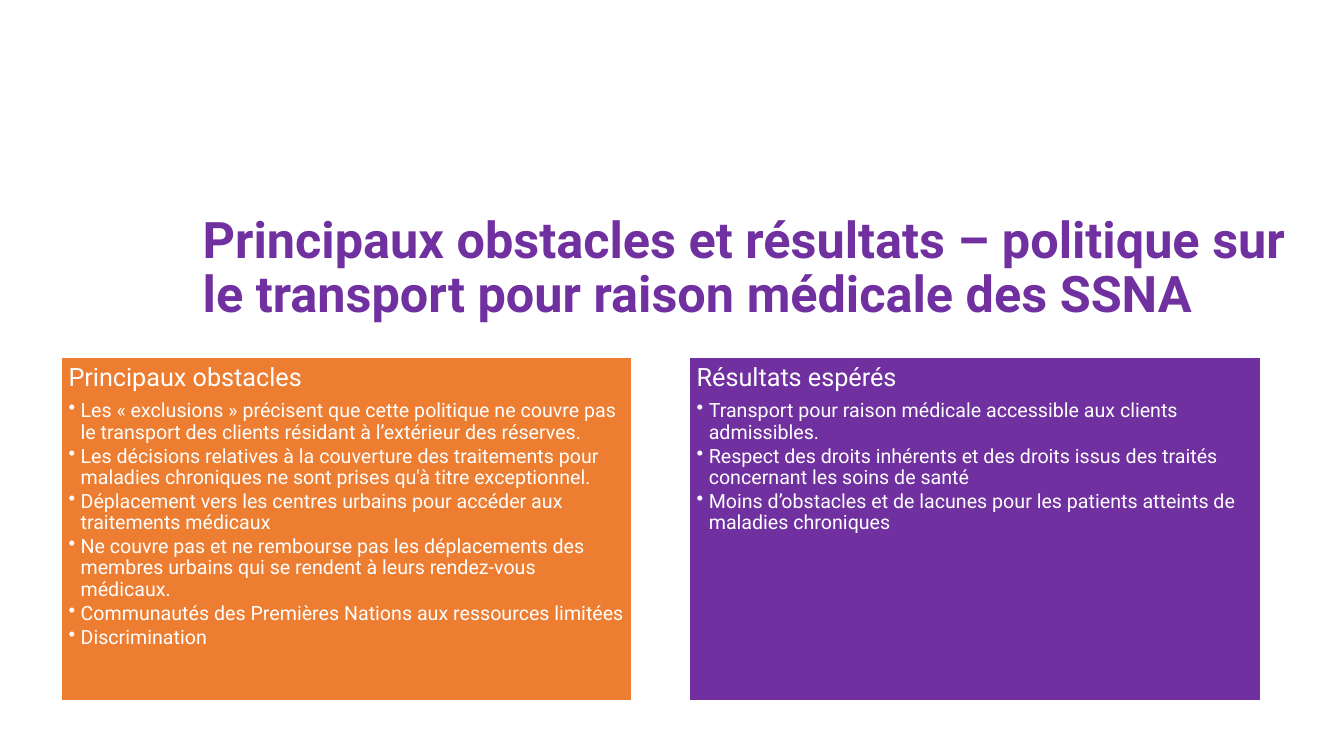
from pptx import Presentation
from pptx.dml.color import RGBColor
from pptx.enum.shapes import MSO_SHAPE
from pptx.enum.text import MSO_ANCHOR, MSO_AUTO_SIZE, PP_ALIGN
from pptx.oxml.ns import qn
from pptx.util import Inches, Pt
from lxml import etree

RECTANGLE = MSO_SHAPE.RECTANGLE
TOP = MSO_ANCHOR.TOP
LEFT = PP_ALIGN.LEFT
NO_AUTOFIT = MSO_AUTO_SIZE.NONE

PURPLE = RGBColor(0x70, 0x30, 0xA0)
ORANGE = RGBColor(0xED, 0x7D, 0x31)
WHITE = RGBColor(0xFF, 0xFF, 0xFF)
FONT = "Roboto"

TITLE = ("Principaux obstacles et résultats – politique sur le transport "
         "pour raison médicale des SSNA")
PANELS = [
    ("Principaux obstacles", ORANGE, [
        "Les « exclusions » précisent que cette politique ne couvre pas "
        "le transport des clients résidant à l’extérieur des réserves.",
        "Les décisions relatives à la couverture des traitements pour "
        "maladies chroniques ne sont prises qu'à titre exceptionnel.",
        "Déplacement vers les centres urbains pour accéder aux traitements médicaux",
        "Ne couvre pas et ne rembourse pas les déplacements des membres urbains "
        "qui se rendent à leurs rendez-vous médicaux.",
        "Communautés des Premières Nations aux ressources limitées",
        "Discrimination",
    ]),
    ("Résultats espérés", PURPLE, [
        "Transport pour raison médicale accessible aux clients admissibles.",
        "Respect des droits inhérents et des droits issus des traités "
        "concernant les soins de santé",
        "Moins d’obstacles et de lacunes pour les patients atteints de "
        "maladies chroniques",
    ]),
]
PANEL_LEFT, PANEL_TOP, PANEL_STEP = 0.61, 3.55, 6.23
PANEL_WIDTH, PANEL_HEIGHT = 5.66, 3.4


def write(paragraph, text, size, color, bold=False):
    """Fill a paragraph with one run in the slide's font."""
    paragraph.text = text
    paragraph.alignment = LEFT
    paragraph.line_spacing = 0.9
    font = paragraph.runs[0].font
    font.name = FONT
    font.size = Pt(size)
    font.bold = bold
    font.color.rgb = color


def add_bullet(paragraph):
    """Give a paragraph a hanging bullet."""
    properties = paragraph._p.get_or_add_pPr()
    properties.set("marL", str(Inches(0.12)))
    properties.set("indent", str(-Inches(0.12)))
    etree.SubElement(properties, qn("a:buChar")).set("char", "•")


def set_title(slide):
    """Place and format the slide title."""
    title = slide.shapes.title
    title.left, title.top = Inches(1.91), Inches(2.08)
    title.width, title.height = Inches(11.08), Inches(0.63)
    frame = title.text_frame
    frame.word_wrap = True
    frame.auto_size = NO_AUTOFIT
    frame.vertical_anchor = TOP
    write(frame.paragraphs[0], TITLE, 36, PURPLE, bold=True)


def add_panel(slide, left, heading, color, points):
    """Draw a filled panel with a heading and its bullet points."""
    panel = slide.shapes.add_shape(
        RECTANGLE, Inches(left), Inches(PANEL_TOP),
        Inches(PANEL_WIDTH), Inches(PANEL_HEIGHT))
    panel.shadow.inherit = False
    panel.fill.solid()
    panel.fill.fore_color.rgb = color
    panel.line.color.rgb = WHITE
    panel.line.width = Pt(1)

    frame = panel.text_frame
    frame.word_wrap = True
    frame.vertical_anchor = TOP
    frame.margin_left = frame.margin_right = Inches(0.07)
    frame.margin_top = frame.margin_bottom = Inches(0.07)
    write(frame.paragraphs[0], heading, 18, WHITE)
    frame.paragraphs[0].space_after = Pt(6.3)
    for point in points:
        paragraph = frame.add_paragraph()
        paragraph.level = 1
        add_bullet(paragraph)
        write(paragraph, point, 14, WHITE)
        paragraph.space_after = Pt(2.1)


def main():
    """Build the slide and save it."""
    deck = Presentation()
    deck.slide_width, deck.slide_height = Inches(13.33), Inches(7.5)
    slide = deck.slides.add_slide(deck.slide_layouts[5])
    set_title(slide)
    for index, (heading, color, points) in enumerate(PANELS):
        add_panel(slide, PANEL_LEFT + index * PANEL_STEP, heading, color, points)
    deck.save("out.pptx")


if __name__ == "__main__":
    main()
